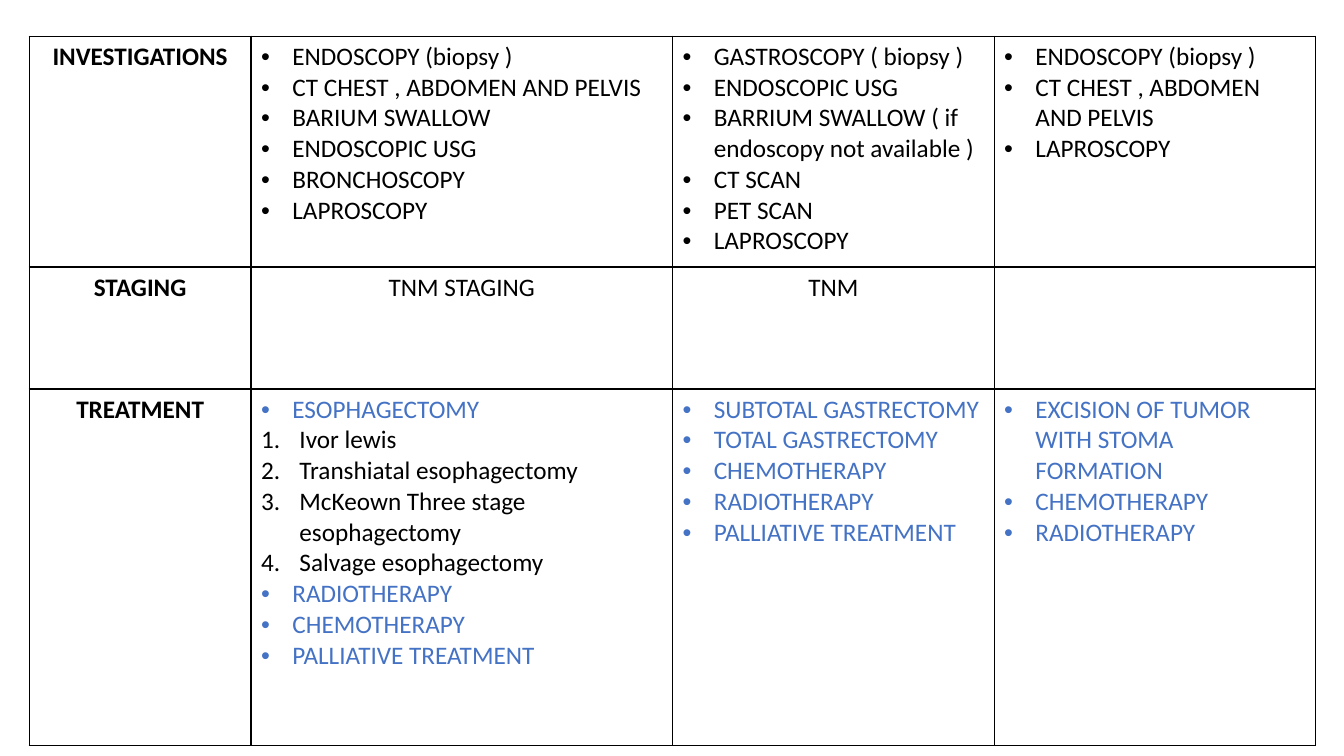
from dataclasses import dataclass

from lxml.etree import SubElement
from pptx import Presentation
from pptx.dml.color import RGBColor
from pptx.enum.text import PP_ALIGN
from pptx.oxml.ns import qn
from pptx.util import Inches, Pt


@dataclass(frozen=True)
class Theme:
    """Colours, font and sizes of the slide."""
    black: str = "000000"
    blue: str = "4472C4"
    white: str = "FFFFFF"
    font: str = "Calibri"
    text_size: int = 18
    border_width: int = 1
    bullet_indent: float = 0.31
    number_indent: float = 0.38


THEME = Theme()
COLUMN_WIDTHS = (2.2, 4.18, 3.19, 3.19)
ROW_HEIGHTS = (2.29, 1.21, 3.54)


def label(text, bold=False):
    """Describe a centred line."""
    return [(text, "label", THEME.black, bold)]


def bullets(*texts, color=THEME.black):
    """Describe a bulleted list."""
    return [(text, "bullet", color, False) for text in texts]


def numbers(*texts):
    """Describe a numbered list."""
    return [(text, "number", THEME.black, False) for text in texts]


ROWS = (
    (
        label("INVESTIGATIONS", bold=True),
        bullets("ENDOSCOPY (biopsy )", "CT CHEST , ABDOMEN AND PELVIS",
                "BARIUM SWALLOW", "ENDOSCOPIC USG", "BRONCHOSCOPY", "LAPROSCOPY"),
        bullets("GASTROSCOPY ( biopsy )", "ENDOSCOPIC USG",
                "BARRIUM SWALLOW ( if endoscopy not available )",
                "CT SCAN", "PET SCAN", "LAPROSCOPY"),
        bullets("ENDOSCOPY (biopsy )", "CT CHEST , ABDOMEN AND PELVIS", "LAPROSCOPY"),
    ),
    (label("STAGING", bold=True), label("TNM STAGING"), label("TNM"), []),
    (
        label("TREATMENT", bold=True),
        bullets("ESOPHAGECTOMY", color=THEME.blue)
        + numbers("Ivor lewis", "Transhiatal esophagectomy",
                  "McKeown Three stage esophagectomy", "Salvage esophagectomy")
        + bullets("RADIOTHERAPY", "CHEMOTHERAPY", "PALLIATIVE TREATMENT", color=THEME.blue),
        bullets("SUBTOTAL GASTRECTOMY", "TOTAL GASTRECTOMY", "CHEMOTHERAPY",
                "RADIOTHERAPY", "PALLIATIVE TREATMENT", color=THEME.blue),
        bullets("EXCISION OF TUMOR WITH STOMA FORMATION", "CHEMOTHERAPY",
                "RADIOTHERAPY", color=THEME.blue),
    ),
)


def set_list_marker(paragraph, kind):
    """Give a paragraph a hanging bullet or number."""
    indent = THEME.bullet_indent if kind == "bullet" else THEME.number_indent
    properties = paragraph._p.get_or_add_pPr()
    properties.set("marL", str(Inches(indent)))
    properties.set("indent", str(-Inches(indent)))
    if kind == "bullet":
        SubElement(properties, qn("a:buFont"), typeface="Arial")
        SubElement(properties, qn("a:buChar"), char="•")
    else:
        SubElement(properties, qn("a:buFont"), typeface="+mj-lt")
        SubElement(properties, qn("a:buAutoNum"), type="arabicPeriod")


def write_paragraph(paragraph, text, kind, color, bold):
    """Write one line of a cell."""
    if kind == "label":
        paragraph.alignment = PP_ALIGN.CENTER
    else:
        set_list_marker(paragraph, kind)
    run = paragraph.add_run()
    run.text = text
    run.font.name = THEME.font
    run.font.size = Pt(THEME.text_size)
    run.font.bold = bold
    run.font.color.rgb = RGBColor.from_string(color)


def style_cell(cell):
    """Draw the four borders and the plain fill of a cell."""
    properties = cell._tc.get_or_add_tcPr()
    for side in ("lnL", "lnR", "lnT", "lnB"):
        line = SubElement(properties, qn(f"a:{side}"), w=str(Pt(THEME.border_width)))
        fill = SubElement(line, qn("a:solidFill"))
        SubElement(fill, qn("a:srgbClr"), val=THEME.black)
    cell.fill.solid()
    cell.fill.fore_color.rgb = RGBColor.from_string(THEME.white)


def fill_cell(cell, lines):
    """Style a cell and write its lines."""
    style_cell(cell)
    frame = cell.text_frame
    for index, line in enumerate(lines):
        paragraph = frame.add_paragraph() if index else frame.paragraphs[0]
        write_paragraph(paragraph, *line)


def add_comparison_table(slide):
    """Add the table of investigations, staging and treatment."""
    table = slide.shapes.add_table(
        len(ROW_HEIGHTS), len(COLUMN_WIDTHS), Inches(0.29), Inches(0.36),
        Inches(sum(COLUMN_WIDTHS)), Inches(sum(ROW_HEIGHTS))).table
    table.first_row = False
    table.horz_banding = False
    for column, width in zip(table.columns, COLUMN_WIDTHS):
        column.width = Inches(width)
    for row, height, contents in zip(table.rows, ROW_HEIGHTS, ROWS):
        row.height = Inches(height)
        for cell, lines in zip(row.cells, contents):
            fill_cell(cell, lines)


def main():
    """Build and save the slide."""
    presentation = Presentation()
    presentation.slide_width = Inches(13.33)
    presentation.slide_height = Inches(7.5)
    slide = presentation.slides.add_slide(presentation.slide_layouts[6])
    add_comparison_table(slide)
    presentation.save("out.pptx")


if __name__ == "__main__":
    main()
